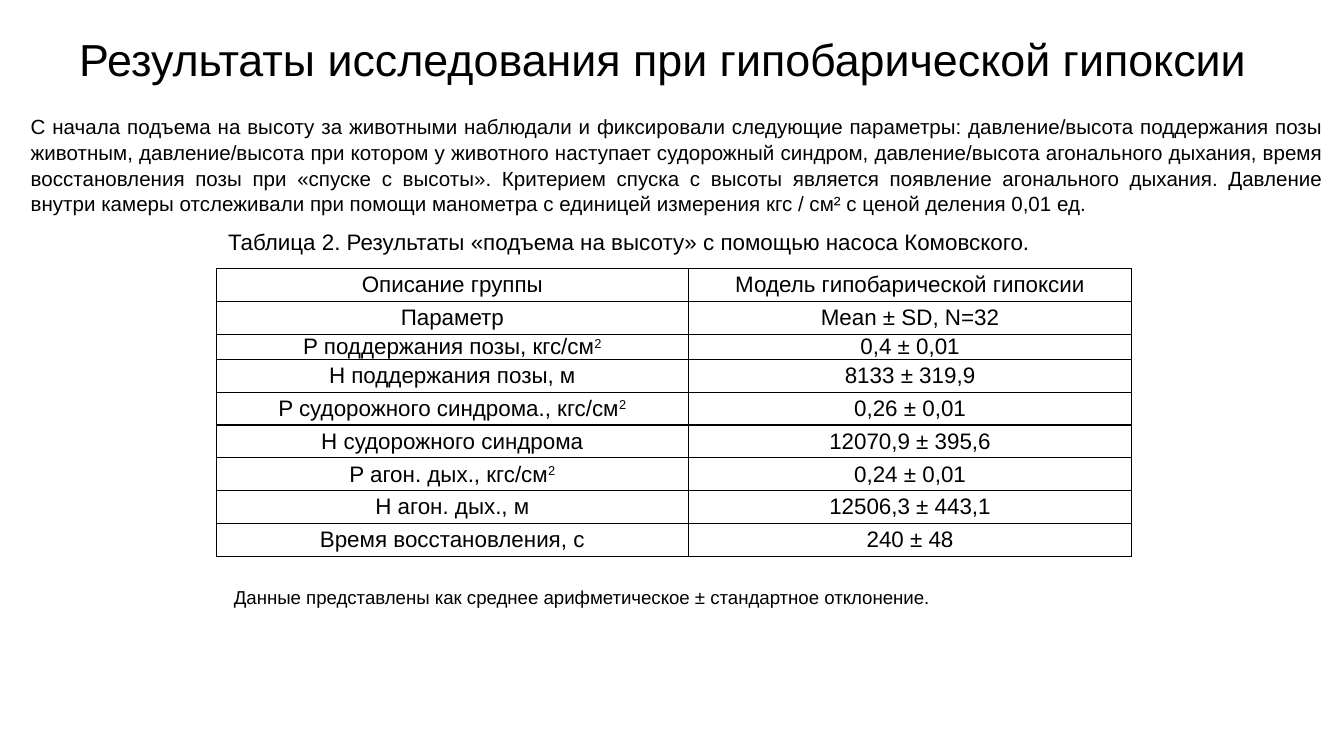
"""Build a slide with the results of a hypobaric hypoxia study."""
from typing import NamedTuple

from lxml.etree import SubElement
from pptx import Presentation
from pptx.dml.color import RGBColor
from pptx.enum.text import MSO_ANCHOR as Anchor, PP_ALIGN as Align
from pptx.oxml.ns import qn
from pptx.slide import Slide
from pptx.table import _Cell as Cell
from pptx.util import Cm, Pt

FONT = "Arial"
BLACK = "000000"
SUPERSCRIPT = "²"


class TextBlock(NamedTuple):
    text: str
    left: float
    top: float
    width: float
    height: float
    size: float
    align: Align = Align.JUSTIFY
    anchor: Anchor = Anchor.TOP
    line_spacing: float = 1.0


class ResultRow(NamedTuple):
    parameter: str
    value: str
    height: float = 0.62


TEXT_BLOCKS = [
    TextBlock("Результаты исследования при гипобарической гипоксии",
              0.69, 0.3, 23.67, 1.6, 24, Align.CENTER, Anchor.MIDDLE),
    TextBlock("Таблица 2. Результаты «подъема на высоту» с помощью насоса Комовского.",
              4.06, 4.06, 17.3, 1.02, 12),
    TextBlock("Данные представлены как среднее арифметическое ± стандартное отклонение.",
              4.17, 10.87, 17.3, 0.94, 10),
    TextBlock("С начала подъема на высоту за животными наблюдали и фиксировали следующие "
              "параметры: давление/высота поддержания позы животным, давление/высота при "
              "котором у животного наступает судорожный синдром, давление/высота агонального "
              "дыхания, время восстановления позы при «спуске с высоты». Критерием спуска с "
              "высоты является появление агонального дыхания. Давление внутри камеры "
              "отслеживали при помощи манометра с единицей измерения кгс / см² с ценой "
              "деления 0,01 ед.",
              0.33, 1.88, 24.94, 2.39, 11, line_spacing=1.05),
]

RESULT_ROWS = [
    ResultRow("Описание группы", "Модель гипобарической гипоксии"),
    ResultRow("Параметр", "Mean ± SD, N=32"),
    ResultRow("P поддержания позы, кгс/см²", "0,4 ± 0,01", 0.36),
    ResultRow("H поддержания позы, м", "8133 ± 319,9"),
    ResultRow("P судорожного синдрома., кгс/см²", "0,26 ± 0,01"),
    ResultRow("H судорожного синдрома", "12070,9 ± 395,6"),
    ResultRow("P агон. дых., кгс/см²", "0,24 ± 0,01"),
    ResultRow("H агон. дых., м", "12506,3 ± 443,1"),
    ResultRow("Время восстановления, с", "240 ± 48"),
]
COLUMN_WIDTHS = [8.92, 8.38]


def color(value: str) -> RGBColor:
    """Turn a hex string into a colour."""
    return RGBColor.from_string(value)


def style_paragraph(paragraph, size: float, align: Align) -> None:
    """Set the font and alignment of a whole paragraph."""
    paragraph.alignment = align
    paragraph.font.name = FONT
    paragraph.font.size = Pt(size)
    paragraph.font.color.rgb = color(BLACK)


def add_text(slide: Slide, block: TextBlock) -> None:
    """Draw one text box."""
    shape = slide.shapes.add_textbox(
        Cm(block.left), Cm(block.top), Cm(block.width), Cm(block.height))
    frame = shape.text_frame
    frame.word_wrap = True
    frame.vertical_anchor = block.anchor
    frame.margin_left = frame.margin_right = Cm(0.25)
    frame.margin_top = frame.margin_bottom = Cm(0.25)
    paragraph = frame.paragraphs[0]
    paragraph.text = block.text
    paragraph.line_spacing = block.line_spacing
    style_paragraph(paragraph, block.size, block.align)


def add_borders(cell: Cell) -> None:
    """Outline all four sides of a cell."""
    properties = cell._tc.get_or_add_tcPr()
    for side in ("a:lnL", "a:lnR", "a:lnT", "a:lnB"):
        line = SubElement(properties, qn(side), w=str(Pt(0.75)))
        fill = SubElement(line, qn("a:solidFill"))
        SubElement(fill, qn("a:srgbClr"), val=BLACK)


def fill_cell(cell: Cell, text: str) -> None:
    """Write a centred cell, raising a final square sign."""
    add_borders(cell)
    cell.fill.background()
    cell.vertical_anchor = Anchor.MIDDLE
    cell.margin_left = cell.margin_right = Cm(0.2)
    cell.margin_top = cell.margin_bottom = Cm(0)
    paragraph = cell.text_frame.paragraphs[0]
    style_paragraph(paragraph, 12, Align.CENTER)
    paragraph.add_run().text = text.removesuffix(SUPERSCRIPT)
    if text.endswith(SUPERSCRIPT):
        exponent = paragraph.add_run()
        exponent.text = "2"
        exponent._r.get_or_add_rPr().set("baseline", "30000")


def add_results(slide: Slide, rows: list[ResultRow]) -> None:
    """Draw the table of results."""
    height = sum(row.height for row in rows)
    table = slide.shapes.add_table(
        len(rows), len(COLUMN_WIDTHS), Cm(4.09), Cm(5.08),
        Cm(sum(COLUMN_WIDTHS)), Cm(height)).table
    table.first_row = table.horz_banding = False
    for column, width in zip(table.columns, COLUMN_WIDTHS):
        column.width = Cm(width)
    for table_row, row in zip(table.rows, rows):
        table_row.height = Cm(row.height)
        for cell, text in zip(table_row.cells, (row.parameter, row.value)):
            fill_cell(cell, text)


def main() -> None:
    """Build and save the presentation."""
    presentation = Presentation()
    presentation.slide_width = Cm(25.4)
    presentation.slide_height = Cm(14.29)
    slide = presentation.slides.add_slide(presentation.slide_layouts[6])
    add_results(slide, RESULT_ROWS)
    for block in TEXT_BLOCKS:
        add_text(slide, block)
    presentation.save("out.pptx")


if __name__ == "__main__":
    main()
